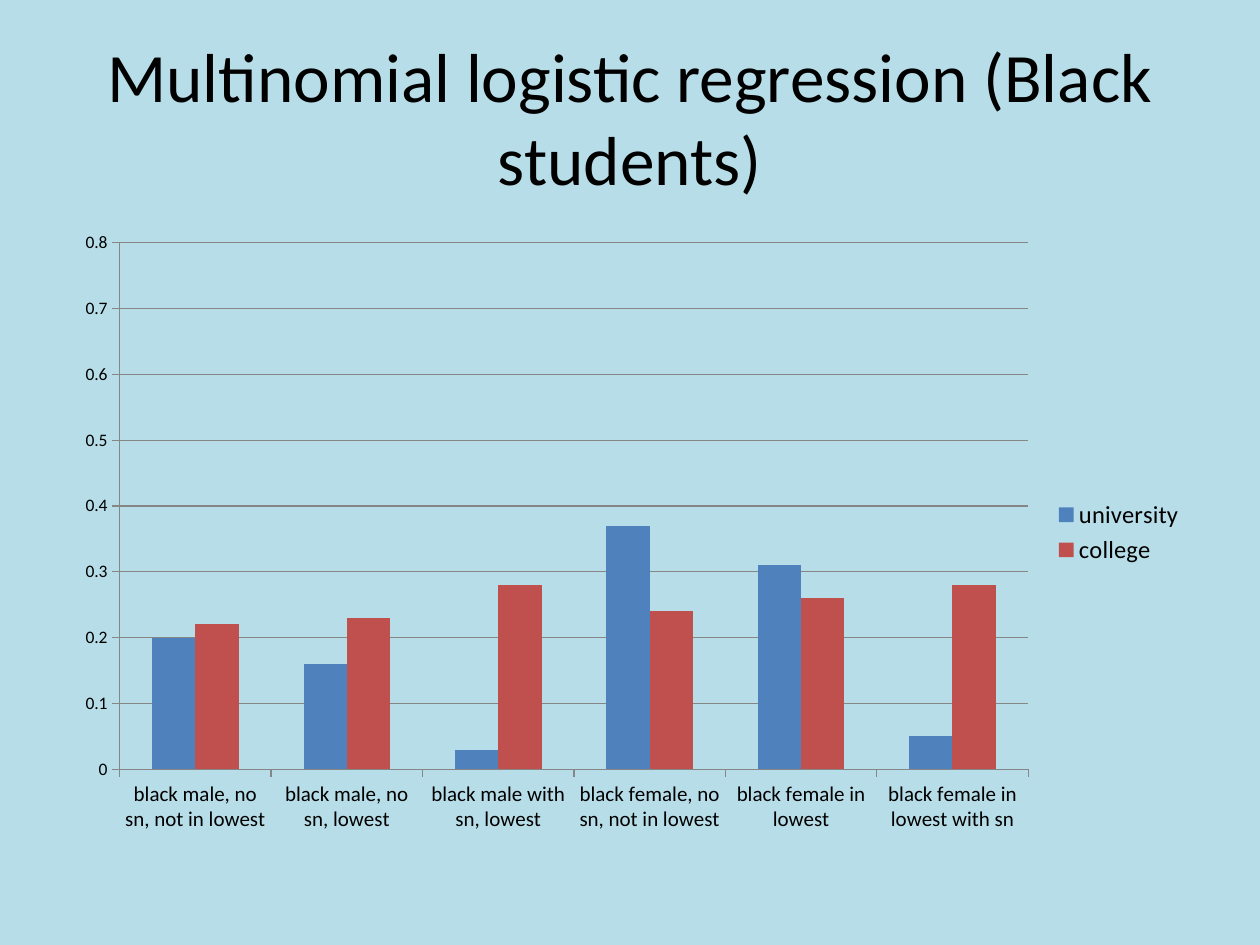
from pptx import Presentation
from pptx.chart.data import CategoryChartData
from pptx.dml.color import RGBColor
from pptx.enum.chart import XL_CHART_TYPE, XL_LEGEND_POSITION, XL_TICK_MARK
from pptx.enum.text import MSO_ANCHOR, PP_ALIGN
from pptx.util import Inches, Pt

COLUMN = XL_CHART_TYPE.COLUMN_CLUSTERED
RIGHT = XL_LEGEND_POSITION.RIGHT
OUTSIDE = XL_TICK_MARK.OUTSIDE
MIDDLE = MSO_ANCHOR.MIDDLE
CENTER = PP_ALIGN.CENTER

FONT = "Calibri"
COLORS = {
    "back": "B7DEE8",
    "text": "000000",
    "line": "868686",
    "university": "4F81BD",
    "college": "C0504D",
}
GROUPS = [
    "black male, no sn, not in lowest",
    "black male, no sn, lowest",
    "black male with sn, lowest",
    "black female, no sn, not in lowest",
    "black female in lowest",
    "black female in lowest with sn",
]
RATES = {
    "university": [0.2, 0.16, 0.03, 0.37, 0.31, 0.05],
    "college": [0.22, 0.23, 0.28, 0.24, 0.26, 0.28],
}


def color(name):
    return RGBColor.from_string(COLORS[name])


def set_font(font, size):
    font.name = FONT
    font.size = Pt(size)
    font.color.rgb = color("text")


prs = Presentation()
prs.slide_width = Inches(10)
prs.slide_height = Inches(7.5)
slide = prs.slides.add_slide(prs.slide_layouts[6])
slide.background.fill.solid()
slide.background.fill.fore_color.rgb = color("back")

# Title
box = slide.shapes.add_textbox(Inches(0.5), Inches(0.3), Inches(9), Inches(1.25))
frame = box.text_frame
frame.word_wrap = True
frame.vertical_anchor = MIDDLE
title = frame.paragraphs[0]
title.text = "Multinomial logistic regression (Black students)"
title.alignment = CENTER
set_font(title.font, 39.6)

# Chart
data = CategoryChartData()
data.categories = GROUPS
for name, rates in RATES.items():
    data.add_series(name, rates)
chart = slide.shapes.add_chart(
    COLUMN, Inches(0.5), Inches(1.75), Inches(9), Inches(4.95), data
).chart
chart.has_title = False
set_font(chart.font, 10)

# Columns
plot = chart.plots[0]
plot.gap_width = 150
plot.overlap = 0
plot.vary_by_categories = False
for series in plot.series:
    series.format.fill.solid()
    series.format.fill.fore_color.rgb = color(series.name)

# Axes
for axis, size in ((chart.category_axis, 12), (chart.value_axis, 10)):
    axis.major_tick_mark = OUTSIDE
    axis.format.line.color.rgb = color("line")
    axis.format.line.width = Pt(0.75)
    set_font(axis.tick_labels.font, size)
scale = chart.value_axis
scale.minimum_scale = 0
scale.maximum_scale = 0.8
scale.major_unit = 0.1
scale.has_major_gridlines = True
grid = scale.major_gridlines.format.line
grid.color.rgb = color("line")
grid.width = Pt(0.75)

# Legend
chart.has_legend = True
chart.legend.position = RIGHT
chart.legend.include_in_layout = False
set_font(chart.legend.font, 14)

prs.save("out.pptx")
